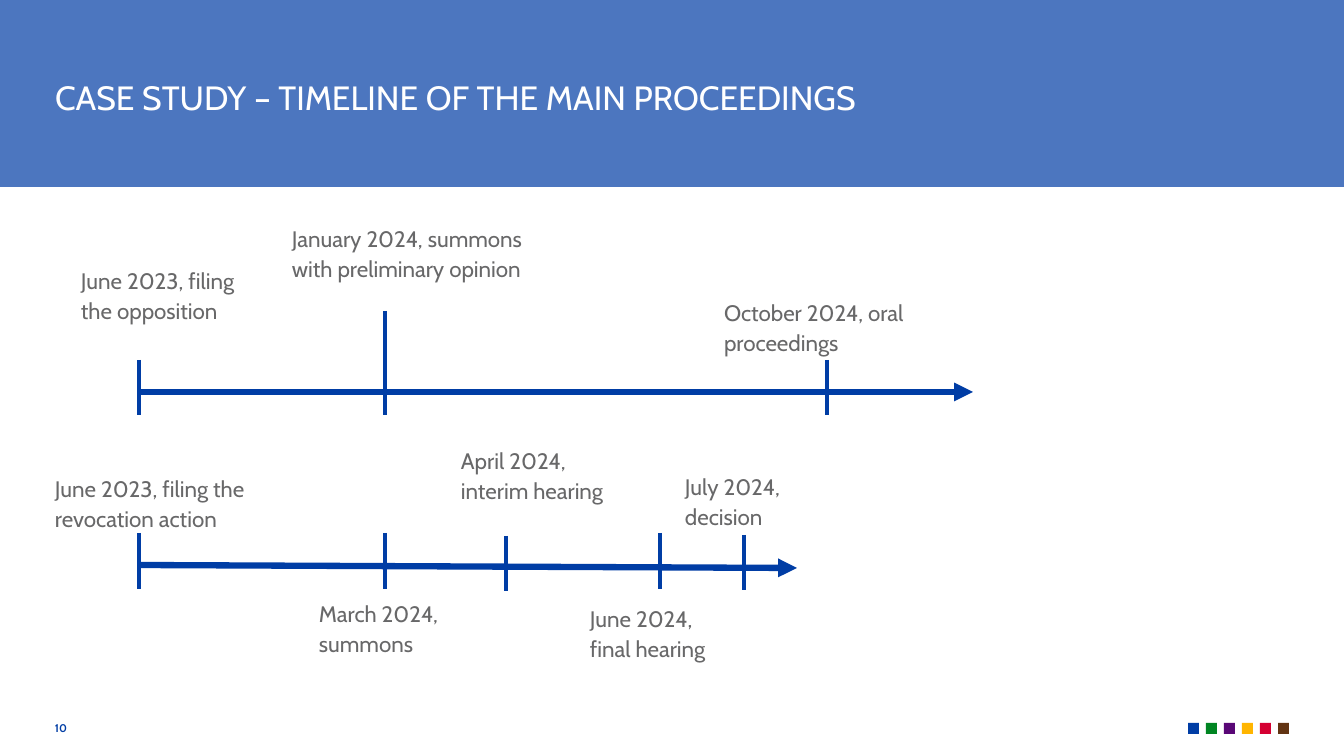
from lxml.etree import SubElement
from pptx import Presentation
from pptx.dml.color import RGBColor
from pptx.enum.shapes import MSO_CONNECTOR, MSO_SHAPE
from pptx.enum.text import MSO_ANCHOR as Anchor, MSO_AUTO_SIZE as AutoSize, PP_ALIGN as Align
from pptx.oxml.ns import qn
from pptx.util import Pt

EMU_PER_PX = 914400 / 100.8
SLIDE_WIDTH, SLIDE_HEIGHT = 1344, 756
FONT = "Cabin"

BLUE = RGBColor(0x00, 0x3D, 0xA5)
WHITE = RGBColor(0xFF, 0xFF, 0xFF)
GREY = RGBColor(0x68, 0x68, 0x69)
SQUARE_COLOURS = [
    BLUE,
    RGBColor(0x00, 0x85, 0x22),
    RGBColor(0x59, 0x07, 0x76),
    RGBColor(0xFF, 0xB5, 0x00),
    RGBColor(0xD5, 0x00, 0x32),
    RGBColor(0x62, 0x34, 0x12),
]

TITLE_FORMAT = {"size": Pt(24), "bold": False, "color": WHITE}
NUMBER_FORMAT = {"size": Pt(8), "bold": True, "color": BLUE}
LABEL_FORMAT = {"size": Pt(16), "bold": False, "color": GREY}

# Each event: text, tick x, tick top, tick bottom, label x, label y, label width;
# all measured from the start of the axis.
OPPOSITION_EVENTS = [
    ("June 2023, filing the opposition", 0, -32, 23, -58, -127, 171),
    ("January 2024, summons with preliminary opinion", 246, -81, 23, 153, -169, 263),
    ("October 2024, oral proceedings", 688, -32, 23, 585, -95, 263),
]
REVOCATION_EVENTS = [
    ("June 2023, filing the revocation action", 0, -32, 24, -84, -92, 214),
    ("March 2024, summons", 246, -32, 24, 180, 33, 150),
    ("April 2024, interim hearing", 367, -29, 26, 322, -120, 148),
    ("June 2024, final hearing", 521, -32, 24, 451, 38, 148),
    ("July 2024, decision", 605, -30, 25, 546, -94, 148),
]


def px(length):
    return round(length * EMU_PER_PX)


def place(shape, left, top, width, height):
    box = {"left": left, "top": top, "width": width, "height": height}
    for name, length in box.items():
        setattr(shape, name, px(length))


def write(shape, text, text_format, anchor=Anchor.TOP, line_spacing=None):
    frame = shape.text_frame
    frame_format = {
        "word_wrap": True, "auto_size": AutoSize.NONE, "vertical_anchor": anchor,
        "margin_left": 0, "margin_top": 0, "margin_right": 0, "margin_bottom": 0,
    }
    for name, value in frame_format.items():
        setattr(frame, name, value)
    frame.text = text
    paragraph = frame.paragraphs[0]
    paragraph.alignment = Align.LEFT
    paragraph.line_spacing = line_spacing
    paragraph.font.name = FONT
    for name, value in text_format.items():
        if name == "color":
            paragraph.font.color.rgb = value
        else:
            setattr(paragraph.font, name, value)


def add_text(slide, box, text, text_format, **options):
    shape = slide.shapes.add_textbox(*map(px, box))
    write(shape, text, text_format, **options)


def add_rectangle(slide, box, colour):
    shape = slide.shapes.add_shape(MSO_SHAPE.RECTANGLE, *map(px, box))
    shape.shadow.inherit = False
    shape.fill.solid()
    shape.fill.fore_color.rgb = colour
    shape.line.fill.background()
    return shape


def add_line(slide, start, end, weight, arrow=False):
    line = slide.shapes.add_connector(MSO_CONNECTOR.STRAIGHT, *map(px, start + end))
    line.line.color.rgb = BLUE
    line.line.width = Pt(weight)
    if arrow:
        SubElement(line.line._get_or_add_ln(), qn("a:tailEnd"), type="triangle")
    SubElement(line.element.spPr, qn("a:effectLst"))


def add_header(slide, left, top, width, height):
    band = add_rectangle(slide, (left, top, width, height), BLUE)
    colour = band.element.spPr.find(qn("a:solidFill")).find(qn("a:srgbClr"))
    SubElement(colour, qn("a:alpha"), val="70000")
    title = slide.shapes.title
    title.element.addprevious(band.element)
    place(title, left + 55, top + 77, width - 112, 82)
    write(title, "CASE STUDY – TIMELINE OF THE MAIN PROCEEDINGS", TITLE_FORMAT)


def add_timeline(slide, left, top, width, drop, events):
    """Draw an arrow that falls by drop over its width, with a tick and label per event."""
    add_line(slide, (left, top), (left + width, top + drop), 4.5, arrow=True)
    for text, tick_x, tick_top, tick_bottom, label_x, label_y, label_width in events:
        x = left + tick_x
        add_line(slide, (x, top + tick_top), (x, top + tick_bottom), 3)
        add_text(slide, (left + label_x, top + label_y, label_width, 58), text,
                 LABEL_FORMAT, line_spacing=Pt(21))


def add_footer(slide, left, top, width, height):
    add_text(slide, (left, top, 37, height), "10", NUMBER_FORMAT, anchor=Anchor.MIDDLE)
    size, pitch = 11, 18
    first = left + width - size - pitch * (len(SQUARE_COLOURS) - 1)
    for index, colour in enumerate(SQUARE_COLOURS):
        add_rectangle(slide, (first + index * pitch, top + 1, size, size), colour)


def main():
    presentation = Presentation()
    presentation.slide_width = px(SLIDE_WIDTH)
    presentation.slide_height = px(SLIDE_HEIGHT)
    slide = presentation.slides.add_slide(presentation.slide_layouts[5])
    add_header(slide, 0, 0, SLIDE_WIDTH, 187)
    add_timeline(slide, 139, 392, 834, 0, OPPOSITION_EVENTS)
    add_timeline(slide, 139, 565, 658, 3, REVOCATION_EVENTS)
    add_footer(slide, 55, 722, 1234, 13)
    presentation.save("out.pptx")


if __name__ == "__main__":
    main()
